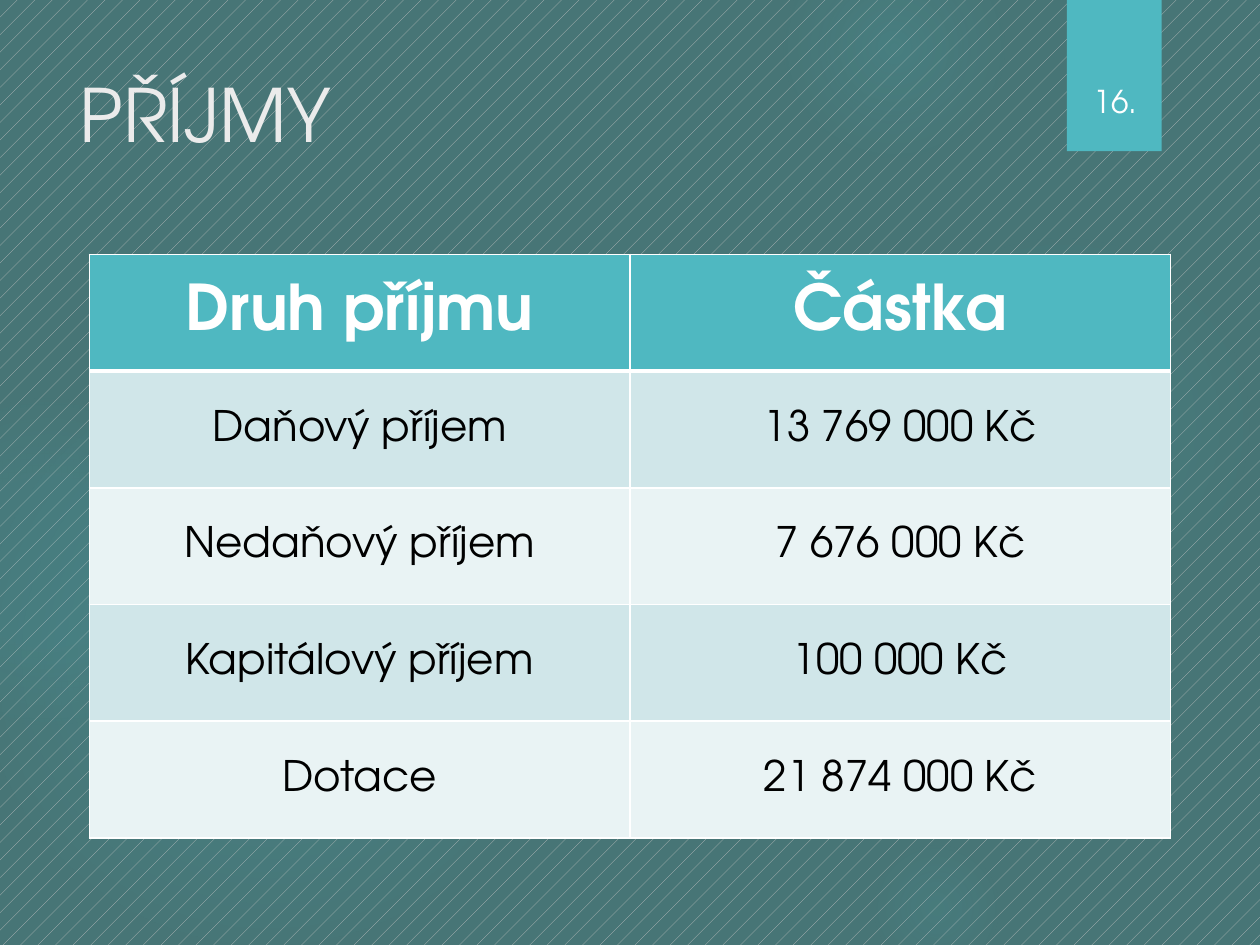
from lxml.etree import SubElement
from pptx import Presentation
from pptx.dml.color import RGBColor
from pptx.enum.dml import MSO_PATTERN
from pptx.enum.shapes import MSO_SHAPE
from pptx.enum.text import MSO_ANCHOR, PP_ALIGN
from pptx.oxml import parse_xml
from pptx.oxml.ns import nsdecls, qn
from pptx.util import Cm, Pt

FONT = "TeX Gyre Adventor"
TEAL = RGBColor(0x47, 0x75, 0x76)
STRIPE = RGBColor(0xBF, 0xBF, 0xBF)
GLOW = RGBColor(0x50, 0xB9, 0xC1)
ACCENT = RGBColor(0x4F, 0xB8, 0xC1)
BAND_DARK = RGBColor(0xD0, 0xE6, 0xE9)
BAND_LIGHT = RGBColor(0xE9, 0xF3, 0xF4)
OFF_WHITE = RGBColor(0xEB, 0xEB, 0xEB)
WHITE = RGBColor(0xFF, 0xFF, 0xFF)
BLACK = RGBColor(0, 0, 0)

TITLE = "PŘÍJMY"
PAGE_NUMBER = "16."
INCOME = [
    ("Druh příjmu", "Částka"),
    ("Daňový příjem", "13 769 000 Kč"),
    ("Nedaňový příjem", "7 676 000 Kč"),
    ("Kapitálový příjem", "100 000 Kč"),
    ("Dotace", "21 874 000 Kč"),
]
# left, top, diameter in cm, then (position, opacity) stops in percent
GLOWS = [
    (17.5, 4.65, 7.82, [(0, 7), (36, 6), (69, 0)]),
    (15.8, -1.27, 4.45, [(0, 14), (36, 7), (73, 0)]),
    (17.5, 16.93, 2.75, [(0, 9), (36, 5), (66, 0)]),
    (-0.42, 7.41, 11.64, [(0, 11), (36, 10), (75, 0)]),
    (-2.33, 8.04, 6.56, [(0, 8), (36, 8), (72, 0)]),
]
TITLE_FORMAT = {"name": FONT, "size": Pt(42), "bold": False}
NUMBER_FORMAT = {"name": FONT, "size": Pt(18), "bold": False}
HEADER_FORMAT = {"name": FONT, "size": Pt(36), "bold": True}
BODY_FORMAT = {"name": FONT, "size": Pt(24), "bold": False}


def write(frame, text, formats, color, align, anchor):
    frame.word_wrap = True
    frame.vertical_anchor = anchor
    para = frame.paragraphs[0]
    para.alignment = align
    span = para.add_run()
    span.text = text
    for name, value in formats.items():
        setattr(span.font, name, value)
    span.font.color.rgb = color


def add_plain_shape(page, kind, left, top, width, height):
    shape = page.shapes.add_shape(kind, Cm(left), Cm(top), Cm(width), Cm(height))
    shape.shadow.inherit = False
    shape.line.fill.background()
    return shape


def add_glow(page, left, top, diameter, stops):
    shape = add_plain_shape(page, MSO_SHAPE.OVAL, left, top, diameter, diameter)
    stop_xml = "".join(
        f'<a:gs pos="{position * 1000}"><a:srgbClr val="{GLOW}">'
        f'<a:alpha val="{opacity * 1000}"/></a:srgbClr></a:gs>'
        for position, opacity in stops
    )
    gradient = parse_xml(
        f'<a:gradFill {nsdecls("a")} rotWithShape="1"><a:gsLst>{stop_xml}</a:gsLst>'
        '<a:path path="circle"><a:fillToRect l="50000" t="50000" r="50000" b="50000"/>'
        "</a:path></a:gradFill>"
    )
    shape._element.spPr.find(qn("a:prstGeom")).addnext(gradient)


def set_borders(cell, widths):
    properties = cell._tc.get_or_add_tcPr()
    for index, (side, width) in enumerate(widths.items()):
        line = parse_xml(f'<a:ln{side} {nsdecls("a")} w="{Pt(width)}"/>')
        fill = SubElement(line, qn("a:solidFill"))
        SubElement(fill, qn("a:srgbClr")).set("val", str(WHITE))
        properties.insert(index, line)


def add_income_table(page, left, top, width, height):
    row_count, column_count = len(INCOME), len(INCOME[0])
    table = page.shapes.add_table(
        row_count, column_count, Cm(left), Cm(top), Cm(width), Cm(height)
    ).table
    table.horz_banding = False
    for row, values in enumerate(INCOME):
        is_header = row == 0
        band = BAND_DARK if row % 2 else BAND_LIGHT
        formats = HEADER_FORMAT if is_header else BODY_FORMAT
        for column, text in enumerate(values):
            cell = table.cell(row, column)
            write(cell.text_frame, text, formats, WHITE if is_header else BLACK,
                  PP_ALIGN.CENTER, None)
            cell.vertical_anchor = MSO_ANCHOR.MIDDLE
            cell.fill.solid()
            cell.fill.fore_color.rgb = ACCENT if is_header else band
            set_borders(cell, {"L": 1, "R": 1, "T": 3 if row == 1 else 1,
                               "B": 3 if is_header else 1})


def main():
    deck = Presentation()
    deck.slide_width, deck.slide_height = Cm(25.4), Cm(19.05)
    page = deck.slides.add_slide(deck.slide_layouts[5])

    backdrop = page.background.fill
    backdrop.patterned()
    backdrop.pattern = MSO_PATTERN.PERCENT_5
    backdrop.fore_color.rgb = STRIPE
    backdrop.back_color.rgb = TEAL

    for glow in GLOWS:
        add_glow(page, *glow)
    tab = add_plain_shape(page, MSO_SHAPE.RECTANGLE, 21.51, 0, 1.91, 3.05)
    tab.fill.solid()
    tab.fill.fore_color.rgb = ACCENT

    title = page.shapes.title
    title.left, title.top, title.width, title.height = map(Cm, (1.35, 1.27, 19.61, 3.89))
    write(title.text_frame, TITLE, TITLE_FORMAT, OFF_WHITE, PP_ALIGN.LEFT, MSO_ANCHOR.TOP)
    page.shapes._spTree.append(title._element)

    number = page.shapes.add_textbox(*map(Cm, (21.69, 1.52, 1.6, 1.02)))
    write(number.text_frame, PAGE_NUMBER, NUMBER_FORMAT, WHITE,
          PP_ALIGN.CENTER, MSO_ANCHOR.MIDDLE)

    add_income_table(page, 1.8, 5.13, 21.8, 11.76)
    deck.save("out.pptx")


if __name__ == "__main__":
    main()
